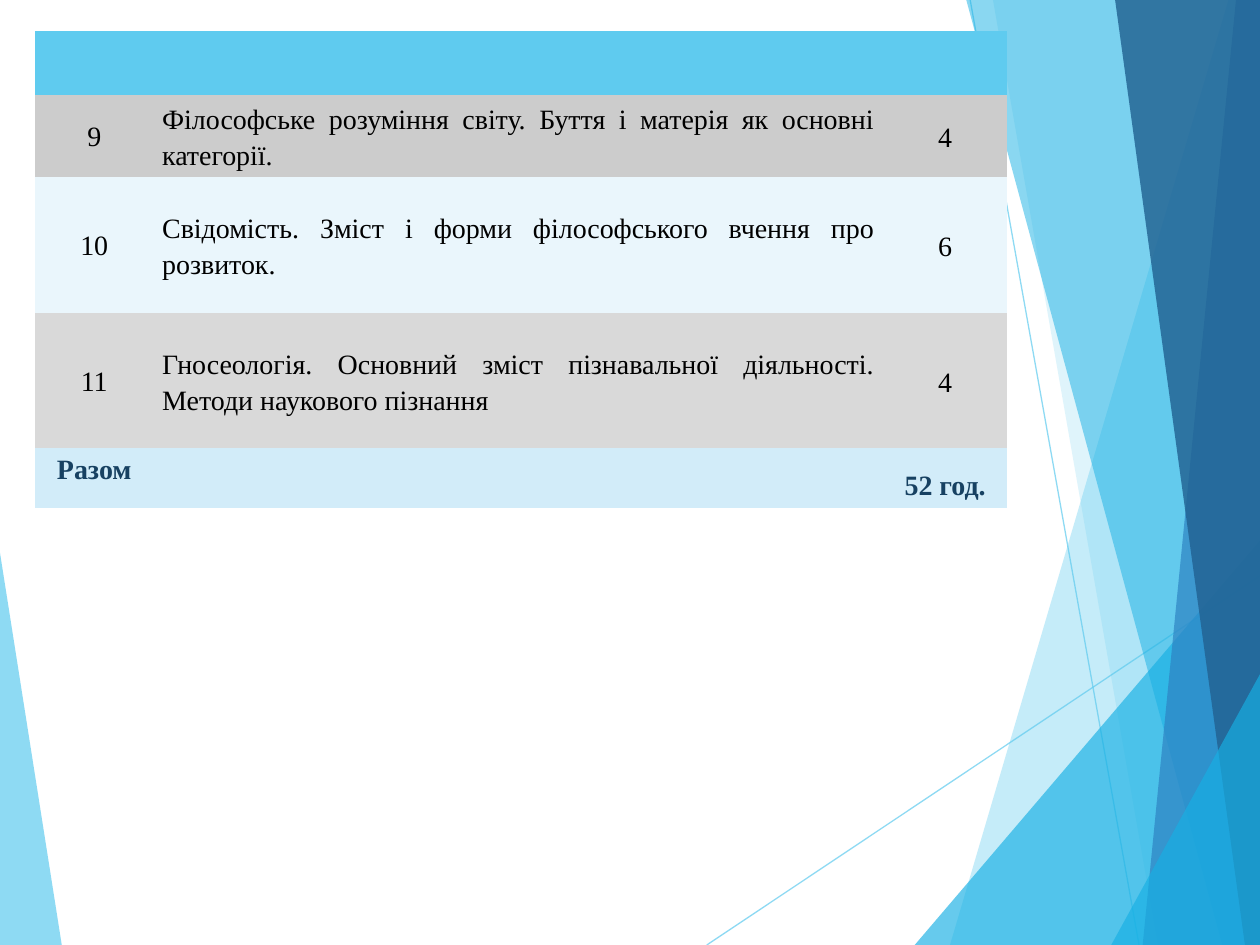
import pptx
import pptx.dml.color
import pptx.enum.dml
import pptx.enum.shapes
import pptx.enum.text
import pptx.oxml
import pptx.oxml.ns
import pptx.util
from dataclasses import dataclass

Pt = pptx.util.Pt
Align = pptx.enum.text.PP_ALIGN
Anchor = pptx.enum.text.MSO_ANCHOR
WIDTH, HEIGHT = 720, 540
NO_STYLE = "{2D5ABB26-0587-4C30-8999-92F81FD0307C}"


@dataclass(frozen=True)
class Theme:
    font: str = "Times New Roman"
    size: float = 16
    text: str = "000000"
    total_text: str = "174162"
    sky: str = "5FCBEF"
    cyan: str = "17B0E4"
    blue: str = "2E83C3"
    navy: str = "226292"
    total_fill: str = "D2ECF9"


THEME = Theme()


def paint(fill, color, opacity=100):
    fill.solid()
    fill.fore_color.rgb = pptx.dml.color.RGBColor.from_string(color)
    if opacity < 100:
        color_node = fill._xPr.find(".//" + pptx.oxml.ns.qn("a:srgbClr"))
        alpha = pptx.oxml.parse_xml(
            f'<a:alpha {pptx.oxml.ns.nsdecls("a")} val="{opacity * 1000}"/>')
        color_node.append(alpha)


def add_facet(page, points, color, opacity):
    corners = [(Pt(x), Pt(y)) for x, y in points]
    builder = page.shapes.build_freeform(*corners[0], scale=1.0)
    builder.add_line_segments(corners[1:], close=True)
    facet = builder.convert_to_shape()
    facet.shadow.inherit = False
    paint(facet.fill, color, opacity)
    facet.line.fill.background()


def add_ray(page, start, end):
    ray = page.shapes.add_connector(
        pptx.enum.shapes.MSO_CONNECTOR.STRAIGHT, *(Pt(v) for v in start + end))
    ray.line.width = Pt(0.75)
    paint(ray.line.fill, THEME.sky, 70)
    ray._element.spPr.append(
        pptx.oxml.parse_xml(f'<a:effectLst {pptx.oxml.ns.nsdecls("a")}/>'))


def add_backdrop(page, right, bottom):
    # Left wedge and thin rays
    add_facet(page, [(0, 316), (35.3, bottom), (0, bottom)], THEME.sky, 70)
    add_ray(page, (403.9, bottom), (right, 329))
    add_ray(page, (554.4, 0), (650.9, bottom))

    # Facets against the right edge: top x, bottom x, colour, opacity
    bands = [
        (702, 542.9, THEME.sky, 36),
        (567.4, 661.7, THEME.sky, 20),
        (552.2, 698.4, THEME.cyan, 50),
        (706.3, 653, THEME.blue, 70),
        (637.2, 711.4, THEME.navy, 82),
    ]
    # Corner triangles: bottom x, height where the right edge is met
    corners = [(522.7, 308.9), (635, 385.2)]

    def add_corner(x, y):
        add_facet(page, [(x, bottom), (right, y), (right, bottom)], THEME.cyan, 66)

    for index, (top_x, bottom_x, color, opacity) in enumerate(bands):
        if index == 2:
            add_corner(*corners[0])
        add_facet(page, [(top_x, 0), (bottom_x, bottom), (right, bottom), (right, 0)],
                  color, opacity)
    add_corner(*corners[1])


def write_cell(cell, text, align, spacing=None, side=None, top=0,
               anchor=Anchor.MIDDLE, color=THEME.text, bold=False):
    cell.vertical_anchor = anchor
    if side is not None:
        cell.margin_left = cell.margin_right = Pt(side)
        cell.margin_top = cell.margin_bottom = Pt(top)
    para = cell.text_frame.paragraphs[0]
    para.text = text
    para.alignment = align
    if spacing:
        para.line_spacing = spacing
    para.font.name = THEME.font
    para.font.size = Pt(THEME.size)
    para.font.bold = bold
    para.font.color.rgb = pptx.dml.color.RGBColor.from_string(color)


def add_topics_table(page, left, top, widths, heights):
    frame = page.shapes.add_table(
        len(heights), len(widths), Pt(left), Pt(top), Pt(sum(widths)), Pt(sum(heights)))
    table = frame.table
    table._tbl.tblPr.find(pptx.oxml.ns.qn("a:tableStyleId")).text = NO_STYLE
    for column, width in zip(table.columns, widths):
        column.width = Pt(width)
    fills = [THEME.sky, "CCCCCC", "EAF6FC", "D9D9D9", THEME.total_fill]
    for row, height, color in zip(table.rows, heights, fills):
        row.height = Pt(height)
        for cell in row.cells:
            paint(cell.fill, color)

    # Empty header band
    table.cell(0, 0).merge(table.cell(0, 2))

    # Topics: number, title, hours
    topics = [
        ("9", "Філософське розуміння світу. Буття і матерія як основні категорії.", "4"),
        ("10", "Свідомість. Зміст і форми філософського вчення про розвиток.", "6"),
        ("11", "Гносеологія. Основний зміст пізнавальної діяльності. "
               "Методи наукового пізнання", "4"),
    ]
    for row, (number, title, hours) in enumerate(topics, start=1):
        write_cell(table.cell(row, 0), number, Align.CENTER, 1.07, 2)
        write_cell(table.cell(row, 1), title, Align.JUSTIFY, 1.15, 5)
        write_cell(table.cell(row, 2), hours, Align.CENTER, 1.15, 5)

    # Total
    total = dict(anchor=Anchor.TOP, color=THEME.total_text, bold=True)
    write_cell(table.cell(4, 0), "Разом", Align.CENTER, **total)
    write_cell(table.cell(4, 2), "52 год.", Align.CENTER, 1.5, 5, 3.6, **total)


def main():
    deck = pptx.Presentation()
    deck.slide_width, deck.slide_height = Pt(WIDTH), Pt(HEIGHT)
    page = deck.slides.add_slide(deck.slide_layouts[6])
    add_backdrop(page, WIDTH, HEIGHT)
    add_topics_table(page, 20, 17.8, [67.7, 417, 70.8], [36.5, 46.8, 77.6, 77.6, 33.5])
    deck.save("out.pptx")


if __name__ == "__main__":
    main()
